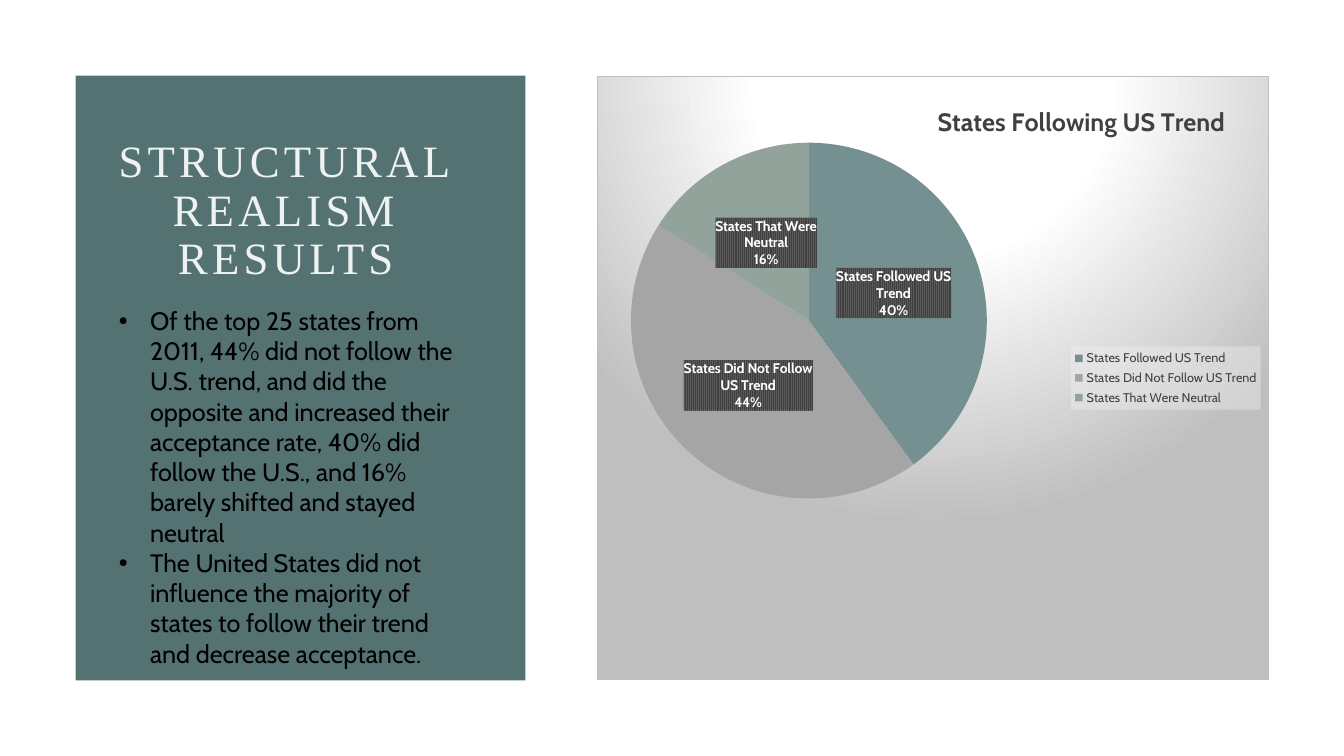
"""Build the structural realism results slide: a text panel beside a pie chart."""
from dataclasses import dataclass

from lxml import etree
from pptx import Presentation
from pptx.chart.data import CategoryChartData
from pptx.dml.color import RGBColor
from pptx.enum.chart import XL_CHART_TYPE as ChartType
from pptx.enum.chart import XL_LABEL_POSITION as LabelPos
from pptx.enum.chart import XL_LEGEND_POSITION as LegendPos
from pptx.enum.shapes import MSO_SHAPE as Shape
from pptx.enum.text import MSO_ANCHOR as Anchor
from pptx.enum.text import MSO_AUTO_SIZE as AutoSize
from pptx.enum.text import PP_ALIGN as Align
from pptx.oxml import parse_xml
from pptx.oxml.ns import nsdecls, qn
from pptx.util import Inches, Pt

WIDTH, HEIGHT = Inches(13.33), Inches(7.5)
SANS, SERIF = "Cabin", "Times New Roman"
COLORS = {
    "panel": "557272", "title": "EEF2F0", "text": "000000", "white": "FFFFFF",
    "grey": "BFBFBF", "dark": "404040", "stripe": "595959", "legend": "F2F2F2",
}


@dataclass(frozen=True)
class Box:
    """A place on the slide in percent of its width and height."""
    x: float
    y: float
    w: float
    h: float

    def emu(self) -> tuple[int, int, int, int]:
        return (round(WIDTH * self.x / 100), round(HEIGHT * self.y / 100),
                round(WIDTH * self.w / 100), round(HEIGHT * self.h / 100))


@dataclass(frozen=True)
class Slice:
    name: str
    value: int
    color: str


PANEL = Box(5.63, 10, 33.46, 80)
TITLE = Box(7.95, 14.93, 26.63, 26.13)
BODY = Box(8.1, 39.73, 26.41, 49.87)
CHART = Box(44.41, 10, 50.04, 80)

SLICES = [
    Slice("States Followed US Trend", 40, "749090"),
    Slice("States Did Not Follow US Trend", 44, "A5A5A5"),
    Slice("States That Were Neutral", 16, "91A39B"),
]
BULLETS = [
    "Of the top 25 states from 2011, 44% did not follow the U.S. trend, and did the "
    "opposite and increased their acceptance rate, 40% did follow the U.S., and 16% "
    "barely shifted and stayed neutral",
    "The United States did not influence the majority of states to follow their trend "
    "and decrease acceptance.",
]


def style(font, name: str, size: float, color: str, bold: bool = False) -> None:
    font.name, font.size, font.bold = name, Pt(size), bold
    font.color.rgb = RGBColor.from_string(COLORS[color])


def rgb(color: str, inner: str = "") -> str:
    return f'<a:srgbClr val="{COLORS[color]}">{inner}</a:srgbClr>'


def chart_props(content: str):
    return parse_xml(f'<c:spPr {nsdecls("c", "a")}>{content}</c:spPr>')


def manual_layout(parent, index: int, inner: bool = False, **shares: float) -> None:
    for old in parent.findall(qn("c:layout")):
        parent.remove(old)
    target = '<c:layoutTarget val="inner"/>' if inner else ""
    modes = "".join(f'<c:{k}Mode val="edge"/>' for k in ("x", "y"))
    values = "".join(f'<c:{k} val="{v}"/>' for k, v in shares.items())
    parent.insert(index, parse_xml(
        f'<c:layout {nsdecls("c")}><c:manualLayout>{target}{modes}{values}'
        '</c:manualLayout></c:layout>'))


def add_panel(s) -> None:
    sp = s.shapes.add_shape(Shape.RECTANGLE, *PANEL.emu())
    sp.shadow.inherit = False
    sp.fill.solid()
    sp.fill.fore_color.rgb = RGBColor.from_string(COLORS["panel"])
    sp.line.fill.background()
    s.shapes.title._element.addprevious(sp._element)


def set_title(s) -> None:
    sp = s.shapes.title
    sp.left, sp.top, sp.width, sp.height = TITLE.emu()
    tf = sp.text_frame
    tf.word_wrap, tf.auto_size, tf.vertical_anchor = True, AutoSize.NONE, Anchor.MIDDLE
    p = tf.paragraphs[0]
    p.alignment, p.line_spacing = Align.CENTER, 0.9
    r = p.add_run()
    r.text = "STRUCTURAL REALISM RESULTS"
    style(r.font, SERIF, 32, "title")
    r.font._element.set("spc", "300")


def add_bullets(s) -> None:
    tf = s.shapes.add_textbox(*BODY.emu()).text_frame
    tf.word_wrap, tf.auto_size = True, AutoSize.SHAPE_TO_FIT_TEXT
    for i, text in enumerate(BULLETS):
        p = tf.add_paragraph() if i else tf.paragraphs[0]
        pr = p._p.get_or_add_pPr()
        pr.set("marL", str(Inches(0.31)))
        pr.set("indent", str(-Inches(0.31)))
        etree.SubElement(pr, qn("a:buFont")).set("typeface", "Arial")
        etree.SubElement(pr, qn("a:buChar")).set("char", "•")
        r = p.add_run()
        r.text = text
        style(r.font, SANS, 18, "text")


def add_labels(plot) -> None:
    plot.has_data_labels = True
    labels = plot.data_labels
    style(labels.font, SANS, 10, "white", True)
    labels.show_value = False
    labels.show_category_name = labels.show_percentage = True
    labels.number_format, labels.number_format_is_linked = "0%", False
    labels.position = LabelPos.CENTER
    el = labels._element
    el.find(qn("c:txPr")).addprevious(chart_props(
        f'<a:pattFill prst="narVert"><a:fgClr>{rgb("dark")}</a:fgClr>'
        f'<a:bgClr>{rgb("stripe")}</a:bgClr></a:pattFill><a:ln><a:noFill/></a:ln>'))
    separator = parse_xml(f'<c:separator {nsdecls("c")}>\n</c:separator>')
    flags = [e for e in el if e.tag in (qn("c:showPercent"), qn("c:showBubbleSize"))]
    flags[-1].addnext(separator)


def add_pie(s) -> None:
    data = CategoryChartData()
    data.categories = [item.name for item in SLICES]
    data.add_series("Series 1", [item.value for item in SLICES])
    chart = s.shapes.add_chart(ChartType.PIE, *CHART.emu(), data).chart
    style(chart.font, SANS, 10, "text")

    chart.has_title = True
    r = chart.chart_title.text_frame.paragraphs[0].add_run()
    r.text = "States Following US Trend"
    style(r.font, SANS, 18, "dark", True)
    manual_layout(chart.chart_title._element, 1, x=0.5, y=0.04)

    plot = chart.plots[0]
    plot.vary_by_categories = True
    for i, item in enumerate(SLICES):
        fmt = plot.series[0].points[i].format
        fmt.fill.solid()
        fmt.fill.fore_color.rgb = RGBColor.from_string(item.color)
        fmt.line.fill.background()
    add_labels(plot)

    chart.has_legend = True
    legend = chart.legend
    legend.position, legend.include_in_layout = LegendPos.RIGHT, False
    style(legend.font, SANS, 9, "dark")
    legend._element.find(qn("c:txPr")).addprevious(chart_props(
        f'<a:solidFill>{rgb("legend", """<a:alpha val="39000"/>""")}</a:solidFill>'))

    body = chart._chartSpace.find(qn("c:chart"))
    manual_layout(body.find(qn("c:plotArea")), 0, True, x=0.05, y=0.0, w=0.53, h=0.81)
    stops = "".join(f'<a:gs pos="{pos}000">{rgb(color)}</a:gs>'
                    for pos, color in ((0, "white"), (39, "white"), (100, "grey")))
    body.addnext(chart_props(
        f'<a:gradFill><a:gsLst>{stops}</a:gsLst><a:path path="circle">'
        '<a:fillToRect l="50000" t="-80000" r="50000" b="180000"/></a:path></a:gradFill>'
        f'<a:ln w="{Pt(0.75)}"><a:solidFill>{rgb("grey")}</a:solidFill></a:ln>'))


def main() -> None:
    prs = Presentation()
    prs.slide_width, prs.slide_height = WIDTH, HEIGHT
    s = prs.slides.add_slide(prs.slide_layouts[5])
    add_panel(s)
    set_title(s)
    add_pie(s)
    add_bullets(s)
    prs.save("out.pptx")


if __name__ == "__main__":
    main()
